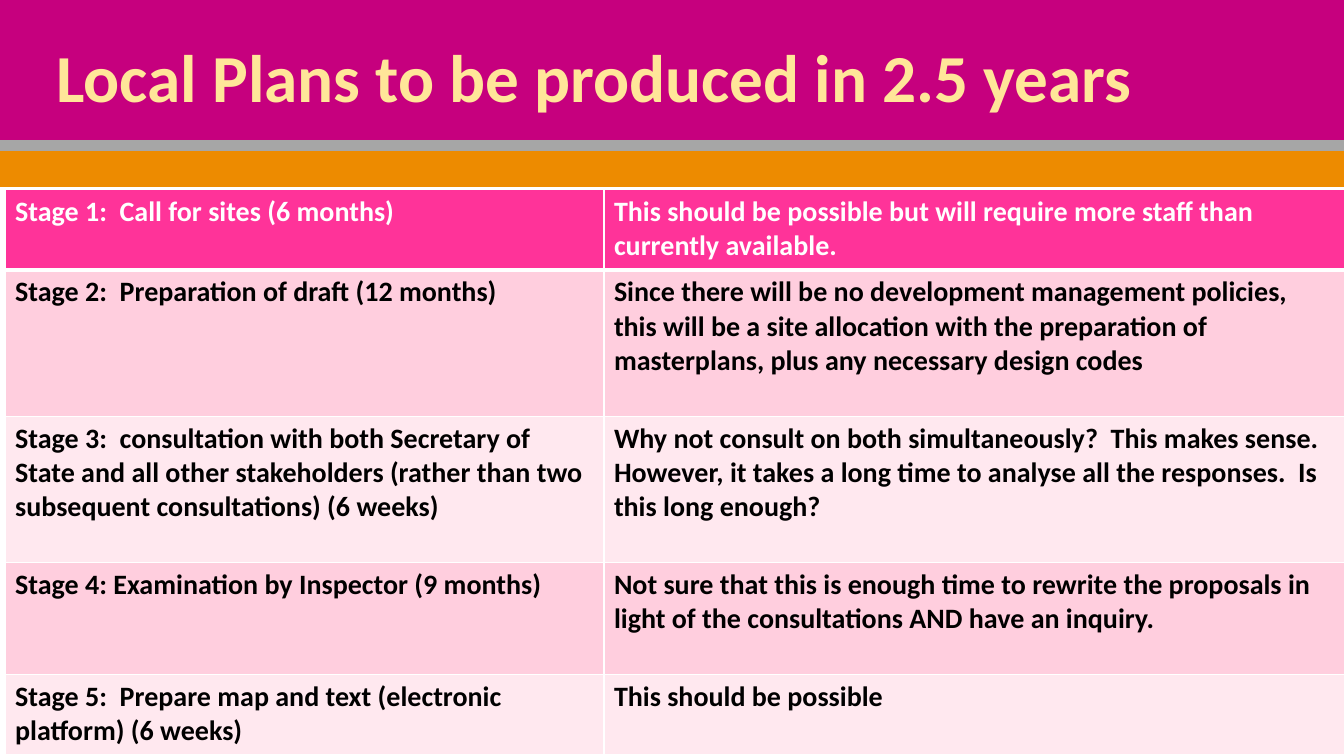
from lxml.etree import SubElement
from pptx import Presentation
from pptx.dml.color import RGBColor
from pptx.enum.text import MSO_ANCHOR, MSO_AUTO_SIZE, PP_ALIGN
from pptx.oxml.ns import qn
from pptx.util import Inches, Pt

MAGENTA = RGBColor(0xC6, 0x00, 0x7E)
GREY = RGBColor(0xA6, 0xA6, 0xA6)
ORANGE = RGBColor(0xED, 0x8B, 0x00)
CREAM = RGBColor(0xFF, 0xE6, 0x99)
HOT_PINK = RGBColor(0xFF, 0x33, 0x99)
PINK = RGBColor(0xFF, 0xCE, 0xDE)
PALE_PINK = RGBColor(0xFF, 0xE8, 0xEF)
WHITE = RGBColor(0xFF, 0xFF, 0xFF)
BLACK = RGBColor(0x00, 0x00, 0x00)
FONT = "Calibri"

BAND_ROWS = [(1.39, MAGENTA), (0.11, GREY), (0.36, ORANGE)]
STAGE_COLUMNS = [5.94, 7.35]
STAGE_ROWS = [0.8, 1.45, 1.45, 1.11, 0.8]
STAGES = [
    ("Stage 1:  Call for sites (6 months)",
     "This should be possible but will require more staff than currently available."),
    ("Stage 2:  Preparation of draft (12 months)",
     "Since there will be no development management policies, this will be a site allocation "
     "with the preparation of masterplans, plus any necessary design codes"),
    ("Stage 3:  consultation with both Secretary of State and all other stakeholders "
     "(rather than two subsequent consultations) (6 weeks)",
     "Why not consult on both simultaneously?  This makes sense.  However, it takes a long "
     "time to analyse all the responses.  Is this long enough?"),
    ("Stage 4: Examination by Inspector (9 months)",
     "Not sure that this is enough time to rewrite the proposals in light of the "
     "consultations AND have an inquiry."),
    ("Stage 5:  Prepare map and text (electronic platform) (6 weeks)",
     "This should be possible"),
]


def add_plain_table(slide, left, top, columns, rows):
    frame = slide.shapes.add_table(
        len(rows), len(columns), Inches(left), Inches(top),
        Inches(sum(columns)), Inches(sum(rows)))
    table = frame.table
    table.first_row = False
    table.horz_banding = False
    for column, width in zip(table.columns, columns):
        column.width = Inches(width)
    for row, height in zip(table.rows, rows):
        row.height = Inches(height)
    return frame


def style_cell(cell, fill, borders):
    properties = cell._tc.get_or_add_tcPr()
    for side, width in zip(("lnL", "lnR", "lnT", "lnB"), borders):
        line = SubElement(properties, qn(f"a:{side}"), w=str(Pt(width)))
        if width:
            color = SubElement(SubElement(line, qn("a:solidFill")), qn("a:srgbClr"))
            color.set("val", str(WHITE))
        else:
            SubElement(line, qn("a:noFill"))
    cell.fill.solid()
    cell.fill.fore_color.rgb = fill


def add_run(paragraph, text, size, color):
    run = paragraph.add_run()
    run.text = text
    run.font.name = FONT
    run.font.size = Pt(size)
    run.font.bold = True
    run.font.color.rgb = color


def add_header(slide, left, top, width):
    frame = add_plain_table(slide, left, top, [width], [height for height, _ in BAND_ROWS])
    for row, (_, color) in zip(frame.table.rows, BAND_ROWS):
        cell = row.cells[0]
        style_cell(cell, color, (0, 0, 0, 0))
        cell.margin_top = cell.margin_bottom = 0
        paragraph = cell.text_frame.paragraphs[0]
        SubElement(paragraph._p, qn("a:endParaRPr"), sz="100")

    title = slide.shapes.title
    title.left, title.top = Inches(left + 0.46), Inches(top + 0.08)
    title.width, title.height = Inches(11.5), Inches(1.45)
    title.element.addprevious(frame.element)
    text_frame = title.text_frame
    text_frame.word_wrap = True
    text_frame.auto_size = MSO_AUTO_SIZE.NONE
    text_frame.vertical_anchor = MSO_ANCHOR.MIDDLE
    paragraph = text_frame.paragraphs[0]
    paragraph.alignment = PP_ALIGN.LEFT
    paragraph.line_spacing = 0.9
    add_run(paragraph, "Local Plans to be produced in 2.5 years", 48, CREAM)


def add_stages(slide, left, top):
    table = add_plain_table(slide, left, top, STAGE_COLUMNS, STAGE_ROWS).table
    table.first_row = True
    for index, (row, texts) in enumerate(zip(table.rows, STAGES)):
        is_first = index == 0
        fill = HOT_PINK if is_first else (PALE_PINK, PINK)[index % 2]
        borders = (1, 1, 3 if index == 1 else 1, 3 if is_first else 1)
        for cell, text in zip(row.cells, texts):
            style_cell(cell, fill, borders)
            add_run(cell.text_frame.paragraphs[0], text, 20, WHITE if is_first else BLACK)


def main():
    presentation = Presentation()
    presentation.slide_width = Inches(13.33)
    presentation.slide_height = Inches(7.5)
    slide = presentation.slides.add_slide(presentation.slide_layouts[5])
    add_header(slide, 0, 0, 13.33)
    add_stages(slide, 0.05, 1.88)
    presentation.save("out.pptx")


if __name__ == "__main__":
    main()
